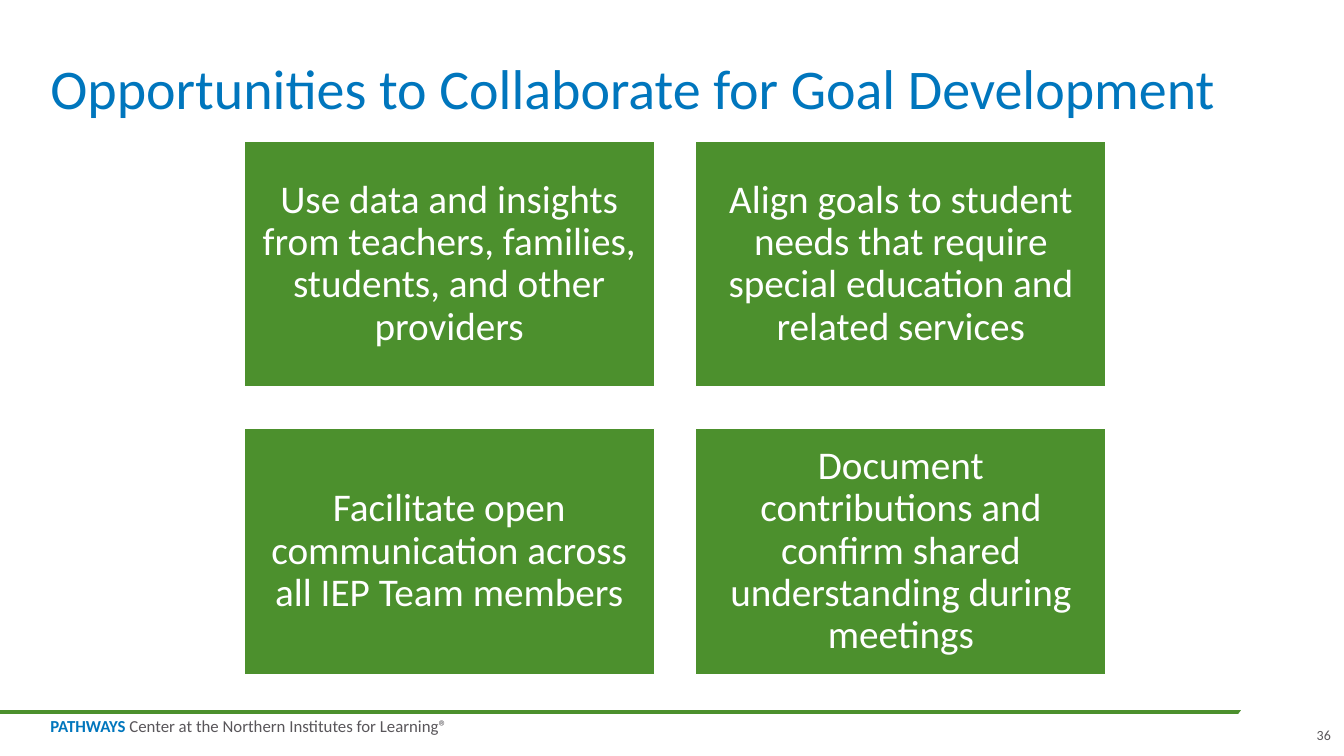
from itertools import product

from pptx import Presentation
from pptx import util as u
from pptx.dml.color import RGBColor
from pptx.enum import shapes, text
from pptx.oxml.ns import qn

COLORS = {"green": "4C902D", "blue": "0076BD", "gray": "59565A", "white": "FFFFFF"}
ACTIONS = [
    "Use data and insights from teachers, families, students, and other providers",
    "Align goals to student needs that require special education and related services",
    "Facilitate open communication across all IEP Team members",
    "Document contributions and confirm shared understanding during meetings",
]
LEFT, TOP = 2.42, 1.4
WIDTH, HEIGHT, GAP = 4.07, 2.44, 0.41


def color(name):
    return RGBColor.from_string(COLORS[name])


class SlideBuilder:
    def __init__(self, page, font="Calibri"):
        self.page = page
        self.font = font

    def set_text(self, box, spans, size, inset=0, anchor="TOP", align="LEFT", spacing=0.9):
        """Fill a shape with one paragraph; spans are (words, color, bold)."""
        frame = box.text_frame
        margin = u.Inches(inset)
        frame_format = {
            "margin_left": margin, "margin_top": margin,
            "margin_right": margin, "margin_bottom": margin,
            "word_wrap": True,
            "auto_size": text.MSO_AUTO_SIZE.NONE,
            "vertical_anchor": text.MSO_ANCHOR[anchor],
        }
        for name, value in frame_format.items():
            setattr(frame, name, value)
        para = frame.paragraphs[0]
        para.alignment = text.PP_ALIGN[align]
        para.line_spacing = spacing
        for words, shade, bold in spans:
            span = para.add_run()
            span.text = words
            font_format = {"name": self.font, "size": u.Pt(size), "bold": bold}
            for name, value in font_format.items():
                setattr(span.font, name, value)
            span.font.color.rgb = color(shade)

    def title(self, words, *place):
        box = self.page.shapes.title
        box.left, box.top, box.width, box.height = map(u.Inches, place)
        self.set_text(box, [(words, "blue", False)], 40, anchor="BOTTOM")

    def textbox(self, place, spans, size, **layout):
        box = self.page.shapes.add_textbox(*map(u.Inches, place))
        self.set_text(box, spans, size, **layout)

    def shape(self, kind, place, fill, line=None):
        box = self.page.shapes.add_shape(kind, *map(u.Inches, place))
        box.shadow.inherit = False
        box.fill.solid()
        box.fill.fore_color.rgb = color(fill)
        if line:
            box.line.color.rgb = color(line)
            box.line.width = u.Pt(1)
        else:
            box.line.fill.background()
        return box

    def card(self, words, *place):
        box = self.shape(shapes.MSO_SHAPE.RECTANGLE, place, "green", "white")
        self.set_text(box, [(words, "white", False)], 28,
                      inset=0.12, anchor="MIDDLE", align="CENTER")

    def rule(self, *ends):
        line = self.page.shapes.add_connector(
            shapes.MSO_CONNECTOR.STRAIGHT, *map(u.Inches, ends))
        line.line.color.rgb = color("green")
        line.line.width = u.Pt(3)
        properties = line._element.spPr
        properties.append(properties.makeelement(qn("a:effectLst"), {}))


def main():
    deck = Presentation()
    deck.slide_width, deck.slide_height = u.Inches(13.33), u.Inches(7.5)
    page = deck.slides.add_slide(deck.slide_layouts[5])
    builder = SlideBuilder(page)

    builder.rule(0, 7.06, 13, 7.06)
    builder.textbox((0.5, 7.13, 4.6, 0.17), [
        ("PATHWAYS", "blue", True),
        (" Center at the Northern Institutes for Learning®", "gray", False),
    ], 12, spacing=0.85)
    rule_end = builder.shape(shapes.MSO_SHAPE.OVAL, (12.16, 6.77, 1.19, 0.58), "white")
    rule_end.rotation = 332.1

    builder.title("Opportunities to Collaborate for Goal Development", 0.5, 0, 12.4, 1.21)
    builder.textbox((12.7, 7.2, 0.5, 0.17), [("36", "gray", False)], 10,
                    anchor="BOTTOM", align="RIGHT", spacing=1.0)

    for words, (row, column) in zip(ACTIONS, product(range(2), repeat=2)):
        builder.card(words, LEFT + column * (WIDTH + GAP),
                     TOP + row * (HEIGHT + GAP), WIDTH, HEIGHT)

    deck.save("out.pptx")


if __name__ == "__main__":
    main()
